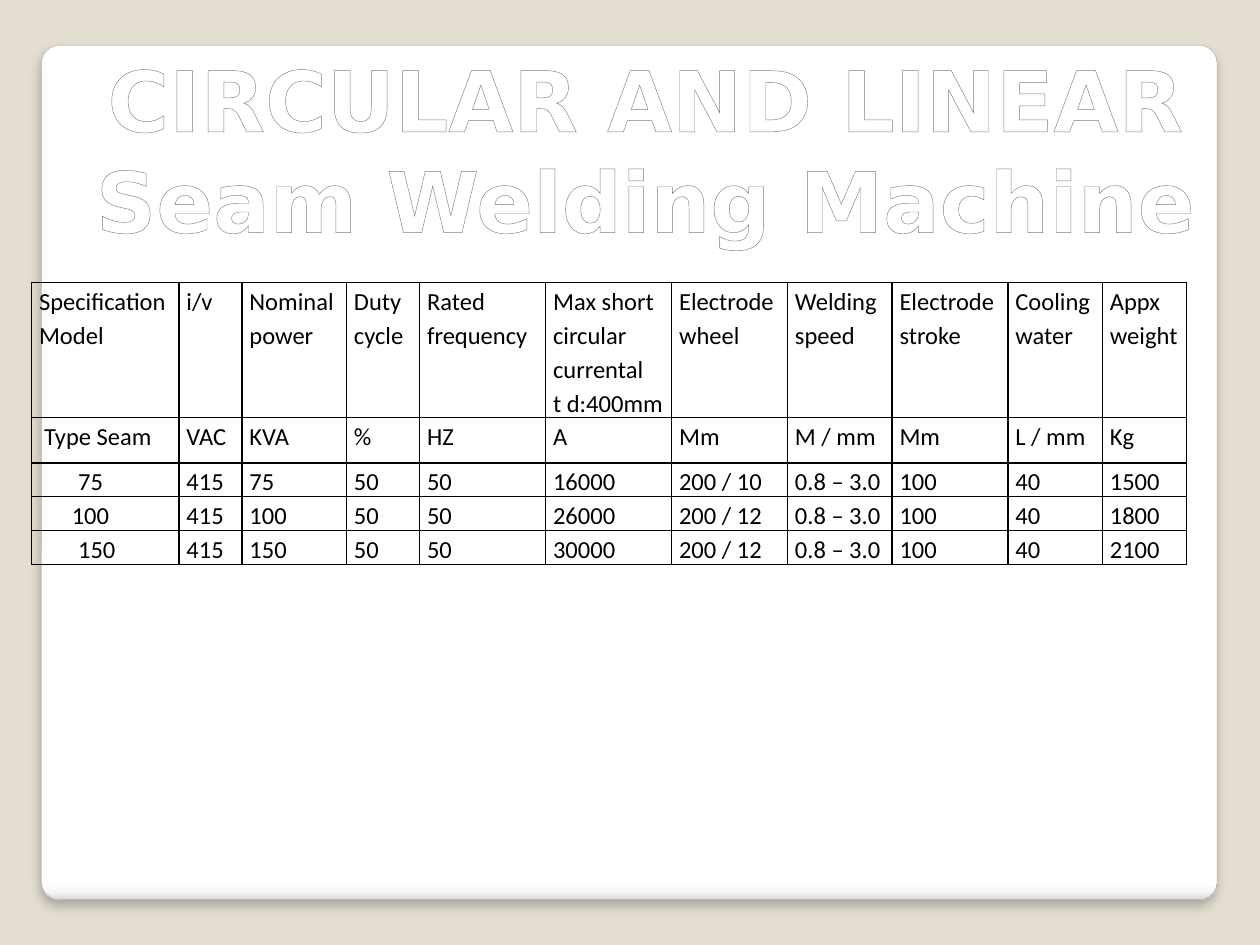
import dataclasses

import lxml.etree
import pptx
import pptx.dml.color
import pptx.enum.shapes
import pptx.enum.text
import pptx.oxml
import pptx.oxml.ns
import pptx.util

Inches = pptx.util.Inches
Pt = pptx.util.Pt

NAMESPACE = pptx.oxml.ns.nsdecls("a")
BACKGROUND = "E3DED1"
BLACK = "000000"
INSET = 0.06


@dataclasses.dataclass(frozen=True)
class Column:
    width: float
    heading: str
    unit: str
    values: tuple[str, str, str]


COLUMNS = [
    Column(1.17, "Specification Model", "Type Seam", ("75", "100", "150")),
    Column(0.5, "i/v", "VAC", ("415",) * 3),
    Column(0.83, "Nominal power", "KVA", ("75", "100", "150")),
    Column(0.58, "Duty cycle", "%", ("50",) * 3),
    Column(1, "Rated frequency", "HZ", ("50",) * 3),
    Column(1, "Max short circular currental\nt d:400mm", "A", ("16000", "26000", "30000")),
    Column(0.92, "Electrode wheel", "Mm", ("200 / 10", "200 / 12", "200 / 12")),
    Column(0.83, "Welding speed", "M / mm", ("0.8 – 3.0",) * 3),
    Column(0.92, "Electrode stroke", "Mm", ("100",) * 3),
    Column(0.75, "Cooling water", "L / mm", ("40",) * 3),
    Column(0.67, "Appx weight", "Kg", ("1500", "1800", "2100")),
]
ROW_HEIGHTS = [1, 0.36, 0.25, 0.25, 0.24]
MODEL_INDENTS = [0, 0.04, 0.31, 0.26, 0.31]


def color(value: str) -> pptx.dml.color.RGBColor:
    return pptx.dml.color.RGBColor.from_string(value)


def solid_xml(value: str) -> str:
    return f'<a:solidFill><a:srgbClr val="{value}"/></a:solidFill>'


def gradient(stops: list[tuple[int, str]]) -> lxml.etree._Element:
    """Return a vertical gradient fill from (percent, colour) stops."""
    stop_xml = "".join(
        f'<a:gs pos="{percent * 1000}"><a:srgbClr val="{value}"/></a:gs>'
        for percent, value in stops
    )
    return pptx.oxml.parse_xml(
        f'<a:gradFill {NAMESPACE} rotWithShape="1"><a:gsLst>{stop_xml}</a:gsLst>'
        '<a:lin ang="5400000" scaled="0"/></a:gradFill>'
    )


def add_panel(page) -> None:
    panel = page.shapes.add_shape(
        pptx.enum.shapes.MSO_SHAPE.ROUNDED_RECTANGLE,
        Inches(0.33), Inches(0.36), Inches(9.33), Inches(6.78),
    )
    panel.adjustments[0] = 0.021
    panel.line.color.rgb = color("A4A4A4")
    panel.line.width = Pt(0.16)
    properties = panel._element.spPr
    stops = [(0, "FFFFFF"), (98, "FFFFFF"), (99, "F7F7F7"), (100, "DADADA")]
    properties.insert(2, gradient(stops))
    properties.append(pptx.oxml.parse_xml(
        f'<a:effectLst {NAMESPACE}><a:outerShdw blurRad="{Pt(6)}" dist="{Pt(4)}" '
        f'dir="5400000" algn="ctr" rotWithShape="0"><a:srgbClr val="{BLACK}">'
        '<a:alpha val="25000"/></a:srgbClr></a:outerShdw></a:effectLst>'
    ))
    # Behind the title placeholder
    page.shapes._spTree.insert(2, panel._element)


def set_title(page) -> None:
    title = page.shapes.title
    title.left, title.top = Inches(0), Inches(0.33)
    title.width, title.height = Inches(10.25), Inches(1.72)
    frame = title.text_frame
    frame.text = "CIRCULAR AND LINEAR\nSeam Welding Machine"
    frame.word_wrap = True
    frame.auto_size = pptx.enum.text.MSO_AUTO_SIZE.SHAPE_TO_FIT_TEXT
    frame.vertical_anchor = pptx.enum.text.MSO_ANCHOR.TOP
    stops = [(0, "FFFFFF"), (9, "FFFFFF"), (50, "7F7F7F"), (79, "FFFFFF"), (100, "FFFFFF")]
    for para in frame.paragraphs:
        para.alignment = pptx.enum.text.PP_ALIGN.CENTER
        for span in para.runs:
            span.font.name = "DejaVu Sans"
            span.font.size = Pt(48)
            span.font.bold = True
            properties = span.font._element
            properties.insert(0, pptx.oxml.parse_xml(
                f'<a:ln {NAMESPACE} w="{Pt(0.83)}">{solid_xml("7D7D7D")}</a:ln>'
            ))
            properties.insert(1, gradient(stops))


def set_cell(cell, text: str, indent: float) -> None:
    cell.text_frame.text = text
    cell.margin_left = Inches(INSET + indent)
    cell.margin_right = Inches(INSET)
    cell.margin_top = cell.margin_bottom = 0
    cell.fill.background()
    for para in cell.text_frame.paragraphs:
        para.line_spacing = 1.15
        for span in para.runs:
            span.font.name = "Calibri"
            span.font.size = Pt(14)
            span.font.color.rgb = color(BLACK)
    properties = cell._tc.get_or_add_tcPr()
    for position, side in enumerate("LRTB"):
        properties.insert(position, pptx.oxml.parse_xml(
            f'<a:ln{side} {NAMESPACE} w="{Pt(1)}">{solid_xml(BLACK)}</a:ln{side}>'
        ))


def add_specifications(page) -> None:
    table = page.shapes.add_table(
        len(ROW_HEIGHTS), len(COLUMNS),
        Inches(0.25), Inches(2.24), Inches(9.17), Inches(sum(ROW_HEIGHTS)),
    ).table
    table.first_row = table.horz_banding = False
    for row, height in zip(table.rows, ROW_HEIGHTS):
        row.height = Inches(height)
    for column_index, column in enumerate(COLUMNS):
        table.columns[column_index].width = Inches(column.width)
        texts = (column.heading, column.unit, *column.values)
        for row_index, text in enumerate(texts):
            indent = MODEL_INDENTS[row_index] if column_index == 0 else 0
            set_cell(table.cell(row_index, column_index), text, indent)


def main() -> None:
    deck = pptx.Presentation()
    deck.slide_width, deck.slide_height = Inches(10), Inches(7.5)
    page = deck.slides.add_slide(deck.slide_layouts.get_by_name("Title Only"))
    page.background.fill.solid()
    page.background.fill.fore_color.rgb = color(BACKGROUND)
    add_panel(page)
    set_title(page)
    add_specifications(page)
    deck.save("out.pptx")


if __name__ == "__main__":
    main()
